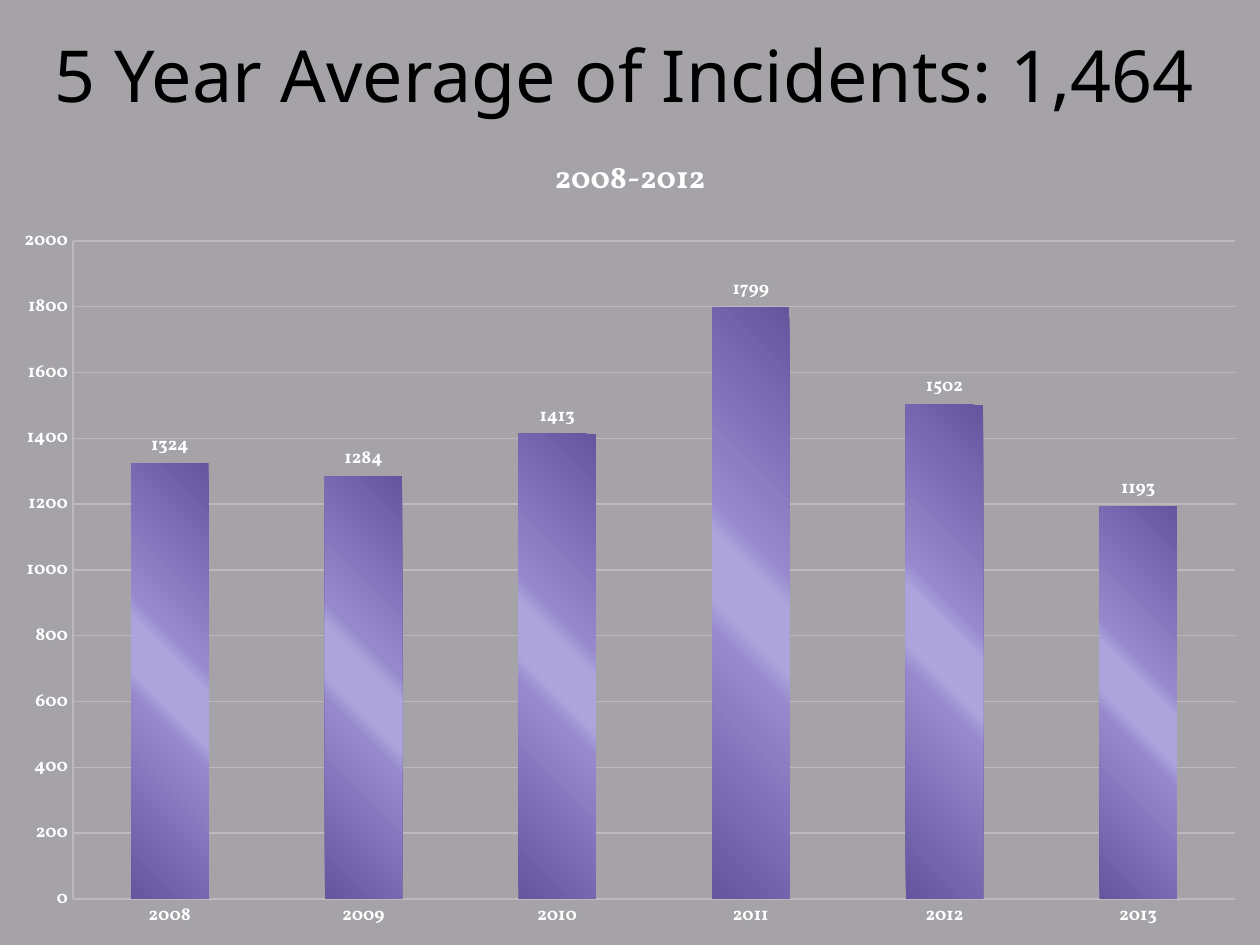
from lxml.etree import SubElement
from pptx import Presentation
from pptx.chart.data import CategoryChartData
from pptx.dml.color import RGBColor
from pptx.enum.chart import XL_CHART_TYPE as ChartType, XL_LABEL_POSITION as LabelPosition
from pptx.enum.chart import XL_TICK_MARK as TickMark
from pptx.enum.text import MSO_ANCHOR as Anchor, MSO_AUTO_SIZE as AutoSize, PP_ALIGN as Align
from pptx.oxml.ns import qn
from pptx.util import Emu, Pt

PX = 914400 // 126
SLIDE_WIDTH, SLIDE_HEIGHT = 1260, 945
CHART_TOP = 126
PLOT_BOX = (73, 241, 1162, 658)

BACKGROUND = RGBColor(0xA5, 0xA3, 0xA8)
BLACK = RGBColor(0x00, 0x00, 0x00)
WHITE = RGBColor(0xFF, 0xFF, 0xFF)
GRID = RGBColor(0xBC, 0xBA, 0xBE)
DARK_PURPLE = RGBColor(0x64, 0x56, 0x9E)
MID_PURPLE = RGBColor(0x95, 0x88, 0xCD)
LIGHT_PURPLE = RGBColor(0xAE, 0xA4, 0xDC)
BAR_STOPS = [(0, DARK_PURPLE), (40, MID_PURPLE), (45, LIGHT_PURPLE),
             (55, LIGHT_PURPLE), (60, MID_PURPLE), (100, DARK_PURPLE)]

INCIDENTS = {"2008": 1324, "2009": 1284, "2010": 1413,
             "2011": 1799, "2012": 1502, "2013": 1193}


def px(length):
    return Emu(length * PX)


def set_font(font, size, name, color, bold=False):
    font.size = Pt(size)
    font.name = name
    font.color.rgb = color
    font.bold = bold


def format_title(title, text):
    title.left, title.top, title.width, title.height = px(0), px(21), px(1250), px(105)
    frame = title.text_frame
    frame.text = text
    frame.word_wrap = True
    frame.auto_size = AutoSize.NONE
    frame.vertical_anchor = Anchor.MIDDLE
    paragraph = frame.paragraphs[0]
    paragraph.alignment = Align.CENTER
    set_font(paragraph.font, 41, "Noto Sans", BLACK)


def place_plot(chart):
    """Fix the inner plot area, given in slide pixels, inside the chart."""
    plot_area = next(chart.element.iter(qn("c:plotArea")))
    for old_layout in plot_area.findall(qn("c:layout")):
        plot_area.remove(old_layout)
    layout = SubElement(plot_area, qn("c:layout"))
    plot_area.insert(0, layout)
    manual = SubElement(layout, qn("c:manualLayout"))
    left, top, width, height = PLOT_BOX
    chart_height = SLIDE_HEIGHT - CHART_TOP
    settings = {
        "layoutTarget": "inner", "xMode": "edge", "yMode": "edge",
        "x": left / SLIDE_WIDTH, "y": (top - CHART_TOP) / chart_height,
        "w": width / SLIDE_WIDTH, "h": height / chart_height,
    }
    for tag, value in settings.items():
        SubElement(manual, qn(f"c:{tag}")).set("val", str(value))


def fill_bars(series):
    fill = series.format.fill
    fill.gradient()
    fill.gradient_angle = 45
    stop_list = next(series.format.element.iter(qn("a:gsLst"))) if hasattr(
        series.format, "element") else next(series._element.iter(qn("a:gsLst")))
    for old_stop in list(stop_list):
        stop_list.remove(old_stop)
    for percent, color in BAR_STOPS:
        stop = SubElement(stop_list, qn("a:gs"), pos=str(percent * 1000))
        SubElement(stop, qn("a:srgbClr"), val=str(color))


def format_axes(chart):
    for axis in (chart.category_axis, chart.value_axis):
        axis.major_tick_mark = axis.minor_tick_mark = TickMark.NONE
        axis.format.line.color.rgb = GRID
    value_axis = chart.value_axis
    value_axis.minimum_scale, value_axis.maximum_scale = 0, 2000
    value_axis.major_unit = 200
    value_axis.major_gridlines.format.line.color.rgb = GRID


def add_incident_chart(slide):
    data = CategoryChartData()
    data.categories = list(INCIDENTS)
    data.add_series("Series 1", list(INCIDENTS.values()))
    chart = slide.shapes.add_chart(
        ChartType.COLUMN_CLUSTERED, px(0), px(CHART_TOP),
        px(SLIDE_WIDTH), px(SLIDE_HEIGHT - CHART_TOP), data).chart
    set_font(chart.font, 10.5, "Vollkorn", WHITE, bold=True)
    chart.has_legend = False
    chart.has_title = True
    title_frame = chart.chart_title.text_frame
    title_frame.text = "2008-2012"
    set_font(title_frame.paragraphs[0].font, 18, "Vollkorn", WHITE, bold=True)
    chart.chart_title.include_in_layout = False

    plot = chart.plots[0]
    plot.gap_width = 150
    plot.vary_by_categories = False
    plot.has_data_labels = True
    labels = plot.data_labels
    labels.show_value = True
    labels.position = LabelPosition.OUTSIDE_END
    set_font(labels.font, 10.5, "Vollkorn", WHITE, bold=True)
    fill_bars(plot.series[0])
    format_axes(chart)
    place_plot(chart)


def main():
    presentation = Presentation()
    presentation.slide_width, presentation.slide_height = px(SLIDE_WIDTH), px(SLIDE_HEIGHT)
    slide = presentation.slides.add_slide(presentation.slide_layouts[5])
    background = slide.background.fill
    background.solid()
    background.fore_color.rgb = BACKGROUND
    format_title(slide.shapes.title, "5 Year Average of Incidents: 1,464")
    add_incident_chart(slide)
    presentation.save("out.pptx")


if __name__ == "__main__":
    main()
